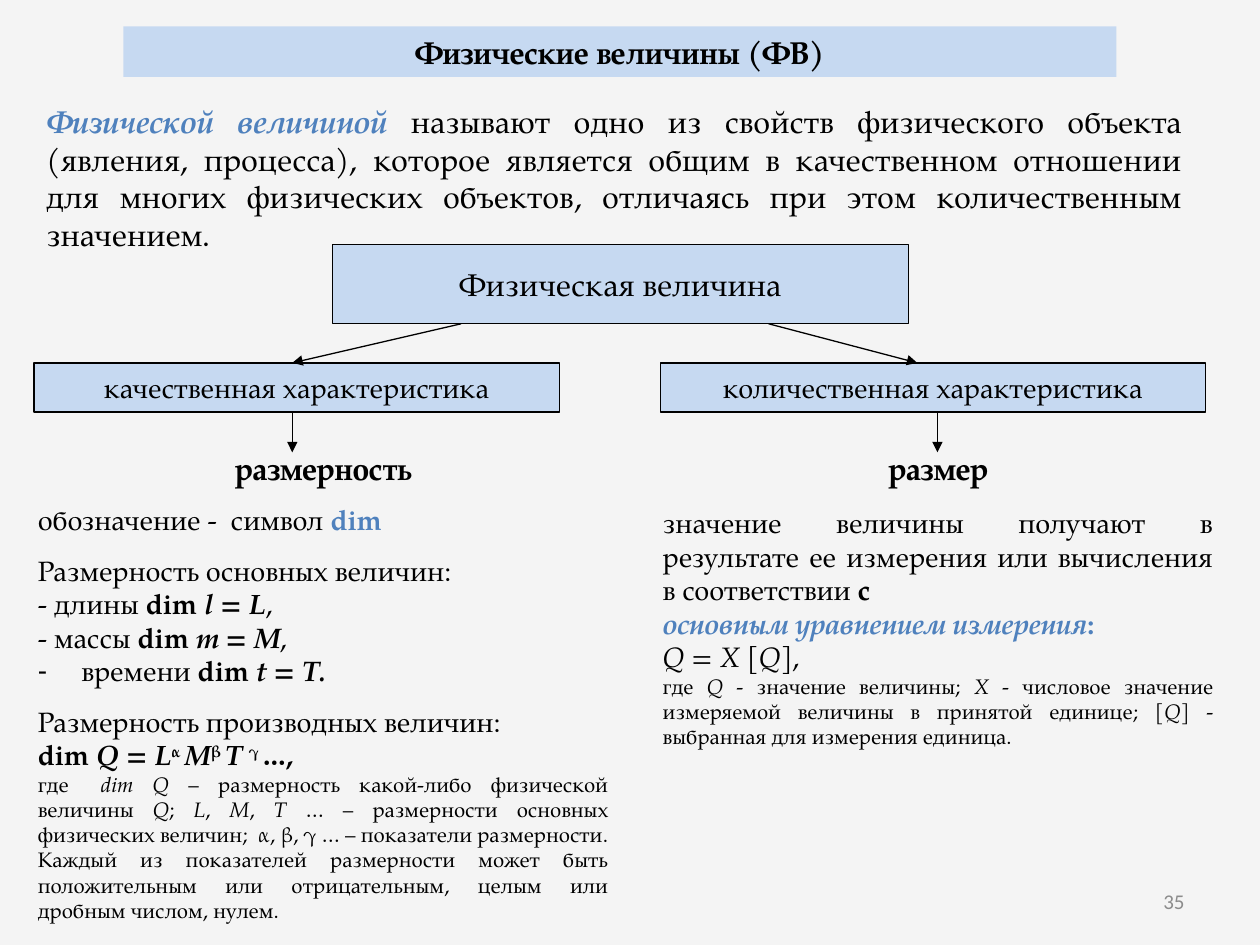
"""Build the slide on physical quantities and their characteristics."""
import pptx
import pptx.chart.data
import pptx.dml.color
import pptx.enum.shapes
import pptx.enum.text
import pptx.oxml.ns
import pptx.util
from pptx.util import Inches
import lxml.etree

FONT = "TeX Gyre Pagella"
BLACK, ACCENT, PALE = "000000", "4F81BD", "C6D9F1"
Align = pptx.enum.text.PP_ALIGN
Anchor = pptx.enum.text.MSO_ANCHOR


def color(code):
    """Turn a hex string into a colour."""
    return pptx.dml.color.RGBColor.from_string(code)


def add_child(parent, tag, **attributes):
    """Append a drawing element to a parent element."""
    child = lxml.etree.SubElement(parent, pptx.oxml.ns.qn(tag))
    for name, value in attributes.items():
        child.set(name, str(value))
    return child


def place(box, left, top, width, height):
    """Move and size a box, in inches."""
    box.left, box.top = Inches(left), Inches(top)
    box.width, box.height = Inches(width), Inches(height)


def prepare(box, anchor=Anchor.TOP, wrap=True):
    """Set the wrapping and anchoring of a box and return its text frame."""
    frame = box.text_frame
    frame.word_wrap = wrap
    frame.auto_size = pptx.enum.text.MSO_AUTO_SIZE.NONE
    frame.vertical_anchor = anchor
    return frame


def add_span(para, text, size, flags="", tint=BLACK, font=FONT):
    """Add a run; flags are b bold, i italic, a accent colour, s superscript."""
    span = para.add_run()
    span.text = text
    span.font.name = font
    span.font.size = pptx.util.Pt(size)
    span.font.bold, span.font.italic = "b" in flags, "i" in flags
    span.font.color.rgb = color(ACCENT if "a" in flags else tint)
    if "s" in flags:
        span.font._element.set("baseline", "30000")


def write(frame, spans, size, align=Align.LEFT, before=0, bullet=None, tab=None):
    """Fill the empty first paragraph of a frame, or add one, with spans."""
    para = frame.paragraphs[0]
    if para.runs:
        para = frame.add_paragraph()
    para.alignment = align
    para.space_before = pptx.util.Pt(before)
    properties = para._p.get_or_add_pPr()
    indent = Inches(0.29) if bullet else 0
    properties.set("marL", str(indent))
    properties.set("indent", str(-indent))
    if bullet:
        add_child(properties, "a:buChar", char=bullet)
    else:
        add_child(properties, "a:buNone")
    if tab:
        stops = add_child(properties, "a:tabLst")
        add_child(stops, "a:tab", pos=Inches(tab), algn="l")
    for text, flags in spans:
        add_span(para, text, size, flags)


def add_block(page, text, size, left, top, width, height):
    """Add an outlined block with centred text."""
    box = page.shapes.add_shape(
        pptx.enum.shapes.MSO_SHAPE.RECTANGLE,
        Inches(left), Inches(top), Inches(width), Inches(height))
    box.shadow.inherit = False
    box.fill.solid()
    box.fill.fore_color.rgb = color(PALE)
    box.line.color.rgb = color(BLACK)
    box.line.width = pptx.util.Pt(0.75)
    write(prepare(box, Anchor.MIDDLE, False), [(text, "")], size, Align.CENTER)


def add_arrow(page, *ends):
    """Add a thin arrow between two points."""
    arrow = page.shapes.add_connector(
        pptx.enum.shapes.MSO_CONNECTOR.STRAIGHT, *map(Inches, ends))
    arrow.line.color.rgb = color(BLACK)
    arrow.line.width = pptx.util.Pt(0.75)
    add_child(arrow.line._get_or_add_ln(), "a:tailEnd", type="triangle")
    add_child(arrow._element.spPr, "a:effectLst")


def add_text(page, left, top, width, height, anchor=Anchor.TOP):
    """Add a wrapping text box and return its text frame."""
    box = page.shapes.add_textbox(
        Inches(left), Inches(top), Inches(width), Inches(height))
    return prepare(box, anchor)


def fill_title(box):
    """Format the title as a pale band."""
    place(box, 0.98, 0.21, 7.88, 0.4)
    box.fill.solid()
    box.fill.fore_color.rgb = color(PALE)
    write(prepare(box), [("Физические величины (ФВ)", "b")], 18, Align.CENTER)


def fill_dimension(box):
    """Write the column on the dimension of a quantity."""
    place(box, 0.2, 3.51, 4.73, 3.87)
    frame = prepare(box)
    write(frame, [("размерность", "b")], 18, Align.CENTER)
    write(frame, [("обозначение -  символ ", ""), ("dim", "ab")], 16, before=9.5)
    write(frame, [("Размерность основных величин:", "")], 16, before=9.5)
    for lead, symbol, base, end, bullet in (
            ("- длины ", "l", "L", (",", ""), None),
            ("- массы ", "т", "М", (",", ""), None),
            (" времени ", "t", "Т", (".", "bi"), "-")):
        write(frame, [(lead, ""), ("dim ", "b"), (symbol, "bi"), (" = ", "b"),
                      (base, "bi"), end], 16, bullet=bullet)
    write(frame, [("Размерность производных величин:", "")], 16, before=9.5)
    write(frame, [("dim", "b"), (" Q = L", "bi"), ("α ", "bs"), ("M", "bi"),
                  ("β ", "bs"), ("T ", "bi"), ("γ ", "bs"), ("…,", "b")], 16)
    write(frame, [
        ("где\t", ""), ("dim Q", "i"),
        (" – размерность какой-либо физической величины ", ""), ("Q", "i"),
        ("; ", ""), ("L", "i"), (", ", ""), ("M", "i"), (", ", ""), ("T ", "i"),
        ("… – размерности основных физических величин;  α, β, γ … – показатели "
         "размерности. Каждый из показателей размерности может быть положительным "
         "или отрицательным, целым или дробным числом, нулем.", ""),
    ], 12, Align.JUSTIFY, tab=0.7)


def fill_size(box):
    """Write the column on the size of a quantity."""
    place(box, 5.16, 3.51, 4.57, 2.49)
    frame = prepare(box)
    write(frame, [("размер", "b")], 18, Align.CENTER)
    write(frame, [("значение величины получают в результате ее измерения или "
                   "вычисления в соответствии ", ""), ("с", "b")],
          16, Align.JUSTIFY, before=11)
    write(frame, [("основным уравнением измерения", "abi"), (":", "ab")], 16)
    write(frame, [("Q", "i"), (" = ", ""), ("X", "i"), (" [", ""),
                  ("Q", "i"), ("],", "")], 16)
    write(frame, [
        ("где ", ""), ("Q", "i"), (" - значение величины; ", ""), ("X", "i"),
        (" - числовое значение измеряемой величины в принятой единице; [", ""),
        ("Q", "i"), ("] - выбранная для измерения единица.", ""),
    ], 12, Align.JUSTIFY)


def main():
    """Build and save the deck."""
    deck = pptx.Presentation()
    deck.slide_width, deck.slide_height = Inches(10), Inches(7.5)
    page = deck.slides.add_slide(deck.slide_layouts.get_by_name("Two Content"))
    page.background.fill.solid()
    page.background.fill.fore_color.rgb = color("F4F4F4")
    title, left_column, right_column = page.placeholders
    fill_title(title)
    fill_dimension(left_column)
    fill_size(right_column)

    definition = add_text(page, 0.27, 0.76, 9.21, 1.3)
    write(definition, [
        ("Физической величиной ", "abi"),
        ("называют одно из свойств физического объекта (явления, процесса), "
         "которое является общим в качественном отношении для многих физических "
         "объектов, отличаясь при этом количественным значением.", ""),
    ], 18, Align.JUSTIFY)

    add_block(page, "Физическая величина", 18, 2.64, 1.94, 4.57, 0.63)
    add_block(page, "качественная характеристика", 16, 0.27, 2.88, 4.17, 0.39)
    add_block(page, "количественная характеристика", 16, 5.24, 2.88, 4.33, 0.39)
    add_arrow(page, 3.66, 2.57, 2.32, 2.88)
    add_arrow(page, 6.1, 2.57, 7.28, 2.88)
    for center in (2.32, 7.44):
        add_arrow(page, center, 3.28, center, 3.59)

    number = add_text(page, 7.17, 6.95, 2.33, 0.4, Anchor.MIDDLE).paragraphs[0]
    number.alignment = Align.RIGHT
    add_span(number, "35", 12, tint="8C8C8C", font="Calibri")
    deck.save("out.pptx")


if __name__ == "__main__":
    main()
